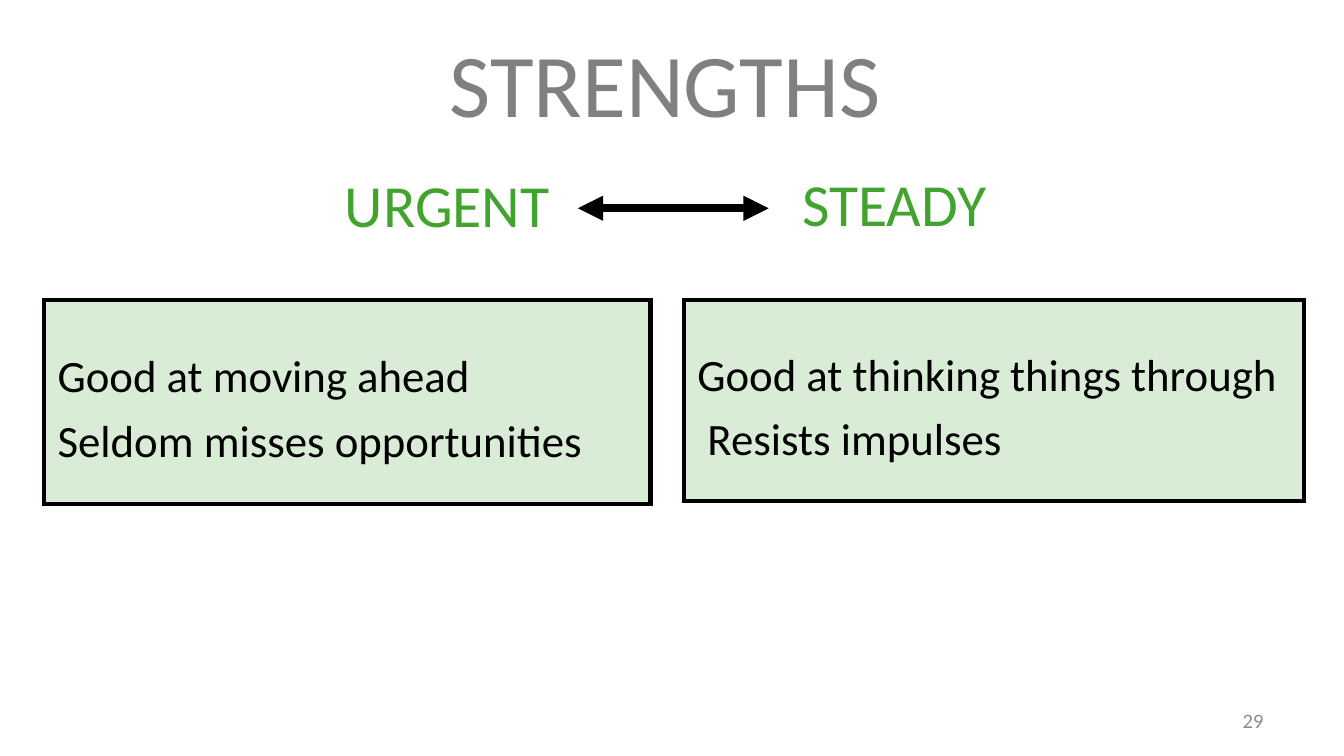
from dataclasses import dataclass

from lxml import etree
from pptx import Presentation
from pptx.dml.color import RGBColor
from pptx.enum.shapes import MSO_CONNECTOR, MSO_SHAPE
from pptx.enum.text import MSO_ANCHOR, PP_ALIGN
from pptx.oxml.ns import qn
from pptx.util import Inches, Pt

LEFT, CENTER, RIGHT = PP_ALIGN.LEFT, PP_ALIGN.CENTER, PP_ALIGN.RIGHT
TOP, MIDDLE = MSO_ANCHOR.TOP, MSO_ANCHOR.MIDDLE
RECTANGLE = MSO_SHAPE.RECTANGLE
STRAIGHT = MSO_CONNECTOR.STRAIGHT


@dataclass(frozen=True)
class Theme:
    """Colours, font and type sizes of the slide."""
    font: str = "Calibri"
    green: RGBColor = RGBColor(0x42, 0xA4, 0x2F)
    black: RGBColor = RGBColor(0, 0, 0)
    title_grey: RGBColor = RGBColor(0x80, 0x80, 0x80)
    number_grey: RGBColor = RGBColor(0x8C, 0x8C, 0x8C)
    title_size: int = 48
    pole_size: int = 32
    body_size: int = 24
    number_size: int = 11
    panel_opacity: int = 20


THEME = Theme()


def write_lines(frame, lines, size, color, align=LEFT, anchor=TOP, spacing=1.0):
    """Write one paragraph per line into a wrapped text frame."""
    frame.word_wrap = True
    frame.vertical_anchor = anchor
    for index, line in enumerate(lines):
        paragraph = frame.paragraphs[0] if index == 0 else frame.add_paragraph()
        paragraph.alignment = align
        paragraph.line_spacing = spacing
        run = paragraph.add_run()
        run.text = line
        run.font.name = THEME.font
        run.font.size = Pt(size)
        run.font.color.rgb = color


def add_label(slide, box, text, size, color, align, anchor=TOP):
    """Place a single line of text in the given box."""
    label = slide.shapes.add_textbox(*map(Inches, box))
    write_lines(label.text_frame, [text], size, color, align, anchor)


def add_strengths_panel(slide, box, strengths):
    """Place an outlined, translucent green panel listing strengths."""
    panel = slide.shapes.add_shape(RECTANGLE, *map(Inches, box))
    panel.shadow.inherit = False
    panel.fill.solid()
    panel.fill.fore_color.rgb = THEME.green
    tint = panel._element.spPr.find(qn("a:solidFill"))[0]
    etree.SubElement(tint, qn("a:alpha"), val=str(THEME.panel_opacity * 1000))
    panel.line.color.rgb = THEME.black
    panel.line.width = Pt(2.25)
    outline = panel._element.spPr.find(qn("a:ln"))
    etree.SubElement(outline, qn("a:miter"), lim="800000")
    write_lines(panel.text_frame, strengths, THEME.body_size, THEME.black,
                anchor=MIDDLE, spacing=1.2)


def add_scale(slide, box, left_pole, right_pole):
    """Place two opposite poles joined by a double-headed arrow."""
    left, top, width, height = box
    left_width, right_width = 2.84, 2.5
    right_start = left + width - right_width
    add_label(slide, (left, top, left_width, height), left_pole,
              THEME.pole_size, THEME.green, RIGHT)
    add_label(slide, (right_start, top - 0.01, right_width, height), right_pole,
              THEME.pole_size, THEME.green, LEFT)
    arrow_y = Inches(top + 0.35)
    arrow = slide.shapes.add_connector(
        STRAIGHT, Inches(left + left_width + 0.11), arrow_y,
        Inches(right_start - 0.15), arrow_y)
    arrow.line.color.rgb = THEME.black
    arrow.line.width = Pt(4.5)
    outline = arrow._element.spPr.find(qn("a:ln"))
    for end in ("a:headEnd", "a:tailEnd"):
        etree.SubElement(outline, qn(end), type="triangle")
    etree.SubElement(arrow._element.spPr, qn("a:effectLst"))


def build_strengths_slide(presentation):
    """Lay out the title, scale, two panels and page number."""
    slide = presentation.slides.add_slide(presentation.slide_layouts[6])
    add_strengths_panel(slide, (0.33, 2.23, 4.51, 1.52),
                        ["Good at moving ahead", "Seldom misses opportunities"])
    add_strengths_panel(slide, (5.09, 2.23, 4.61, 1.5),
                        ["Good at thinking things through", " Resists impulses"])
    add_scale(slide, (1.35, 1.2, 7.02, 0.64), "URGENT", "STEADY")
    add_label(slide, (7.17, 5.21, 2.33, 0.3), "29",
              THEME.number_size, THEME.number_grey, RIGHT, MIDDLE)
    add_label(slide, (3.22, 0.16, 3.46, 0.91), "STRENGTHS",
              THEME.title_size, THEME.title_grey, CENTER)


def main():
    """Build and save the presentation."""
    presentation = Presentation()
    presentation.slide_width = Inches(10)
    presentation.slide_height = Inches(10 * 9 / 16)
    build_strengths_slide(presentation)
    presentation.save("out.pptx")


if __name__ == "__main__":
    main()
